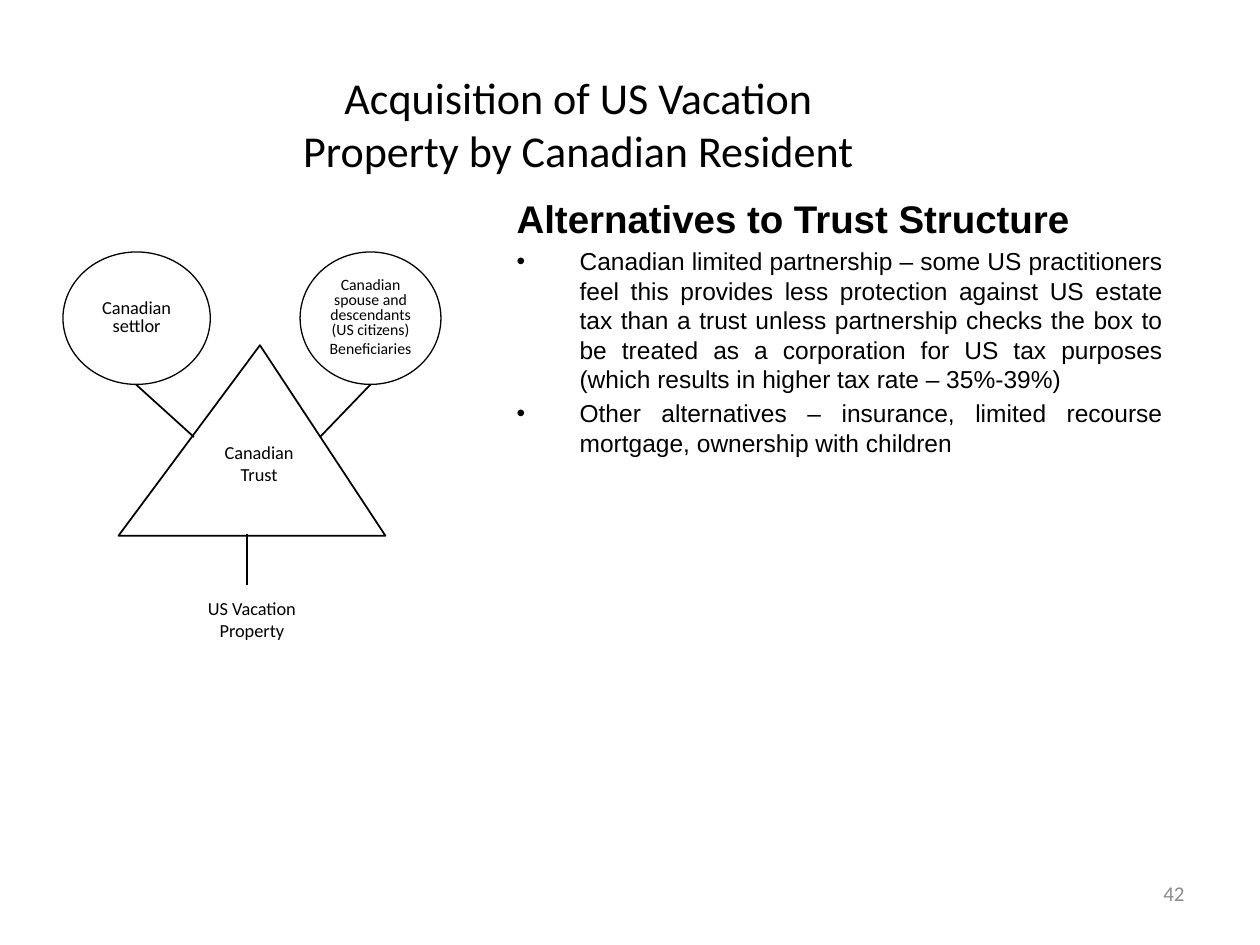
from dataclasses import dataclass

import lxml.etree
import pptx
import pptx.dml.color
import pptx.enum.shapes
import pptx.enum.text
import pptx.oxml.ns
import pptx.util

Cm = pptx.util.Cm
Pt = pptx.util.Pt
ALIGN = pptx.enum.text.PP_ALIGN
ANCHOR = pptx.enum.text.MSO_ANCHOR
SHAPE = pptx.enum.shapes.MSO_SHAPE
COLORS = {"ink": "000000", "paper": "FFFFFF", "number": "8C8C8C"}


@dataclass
class Box:
    left: float
    top: float
    width: float
    height: float


@dataclass
class Party:
    box: Box
    text: str
    size: float
    spacings: tuple


@dataclass
class Label:
    box: Box
    text: str
    size: float = 10.5
    color: str = "ink"
    align: ALIGN = ALIGN.CENTER
    anchor: ANCHOR = ANCHOR.TOP


@dataclass
class Link:
    x1: float
    y1: float
    x2: float
    y2: float


PARTIES = [
    Party(Box(1.27, 5.08, 2.97, 2.67), "Canadian settlor", 10.5, (0.8,)),
    Party(Box(6.05, 5.08, 2.84, 2.67),
          "Canadian spouse and descendants (US citizens)\nBeneficiaries", 9, (0.8, 1)),
]
TRUST = Box(2.39, 6.96, 5.38, 3.84)
LABELS = [
    Label(Box(3.94, 8.76, 2.57, 1.19), "Canadian\nTrust"),
    Label(Box(3.66, 11.91, 2.84, 1.14), "US Vacation Property"),
    Label(Box(18.21, 17.35, 5.92, 1.32), "42", 12, "number", ALIGN.RIGHT, ANCHOR.MIDDLE),
]
LINKS = [
    Link(4.98, 10.77, 4.98, 11.79),
    Link(2.74, 7.75, 3.91, 8.81),
    Link(6.45, 8.81, 7.47, 7.75),
]
HEADING = "Alternatives to Trust Structure"
BULLETS = [
    "Canadian limited partnership – some US practitioners feel this provides less "
    "protection against US estate tax than a trust unless partnership checks the box "
    "to be treated as a corporation for US tax purposes (which results in higher tax "
    "rate – 35%-39%)",
    "Other alternatives – insurance, limited recourse mortgage, ownership with children",
]


def rgb(name: str) -> pptx.dml.color.RGBColor:
    return pptx.dml.color.RGBColor.from_string(COLORS[name])


def bounds(box: Box) -> tuple:
    return Cm(box.left), Cm(box.top), Cm(box.width), Cm(box.height)


def place(sp, box: Box) -> None:
    sp.left, sp.top, sp.width, sp.height = bounds(box)


def style(p, size: float, color: str = "ink", font: str = "Calibri",
          bold: bool = False) -> None:
    for r in p.runs:
        r.font.name = font
        r.font.size = Pt(size)
        r.font.bold = bold
        r.font.color.rgb = rgb(color)


def add_outline(s, kind: SHAPE, box: Box, width: float):
    sp = s.shapes.add_shape(kind, *bounds(box))
    sp.shadow.inherit = False
    sp.line.color.rgb = rgb("ink")
    sp.line.width = Pt(width)
    return sp


def add_party(s, party: Party) -> None:
    sp = add_outline(s, SHAPE.OVAL, party.box, 0.75)
    sp.fill.solid()
    sp.fill.fore_color.rgb = rgb("paper")
    tf = sp.text_frame
    tf.margin_left = tf.margin_right = 0
    tf.word_wrap = True
    tf.vertical_anchor = ANCHOR.MIDDLE
    tf.text = party.text
    for p, spacing in zip(tf.paragraphs, party.spacings):
        p.alignment = ALIGN.CENTER
        p.line_spacing = spacing
        style(p, party.size)


def add_label(s, label: Label) -> None:
    tf = s.shapes.add_textbox(*bounds(label.box)).text_frame
    tf.word_wrap = True
    tf.vertical_anchor = label.anchor
    tf.text = label.text
    for p in tf.paragraphs:
        p.alignment = label.align
        style(p, label.size, label.color)


def add_link(s, link: Link) -> None:
    line = s.shapes.add_connector(
        pptx.enum.shapes.MSO_CONNECTOR.STRAIGHT,
        Cm(link.x1), Cm(link.y1), Cm(link.x2), Cm(link.y2))
    line.line.color.rgb = rgb("ink")
    line.line.width = Pt(1)
    lxml.etree.SubElement(line._element.spPr, pptx.oxml.ns.qn("a:effectLst"))


def fill_title(sp) -> None:
    place(sp, Box(1.27, 2.03, 20.78, 0.91))
    tf = sp.text_frame
    tf.text = "Acquisition of US Vacation\vProperty by Canadian Resident"
    tf.auto_size = pptx.enum.text.MSO_AUTO_SIZE.NONE
    tf.vertical_anchor = ANCHOR.MIDDLE
    tf.paragraphs[0].alignment = ALIGN.CENTER
    style(tf.paragraphs[0], 25.2)


def fill_body(sp) -> None:
    place(sp, Box(10.16, 3.81, 13.54, 11.23))
    tf = sp.text_frame
    tf.text = "\n".join([HEADING, *BULLETS])
    tf.auto_size = pptx.enum.text.MSO_AUTO_SIZE.NONE
    for i, p in enumerate(tf.paragraphs):
        is_heading = i == 0
        pPr = p._p.get_or_add_pPr()
        pPr.set("marL", str(Cm(1.27)))
        pPr.set("indent", str(-Cm(1.27)))
        tag = "a:buNone" if is_heading else "a:buChar"
        bullet = lxml.etree.SubElement(pPr, pptx.oxml.ns.qn(tag))
        if not is_heading:
            bullet.set("char", "•")
        p.alignment = ALIGN.LEFT if is_heading else ALIGN.JUSTIFY
        p.space_before = Pt(0 if is_heading else 2.8)
        style(p, 22 if is_heading else 14, font="Arial", bold=is_heading)


def main() -> None:
    prs = pptx.Presentation()
    prs.slide_width, prs.slide_height = Cm(25.4), Cm(19.05)
    s = prs.slides.add_slide(prs.slide_layouts[1])
    fill_title(s.shapes.title)
    fill_body(s.placeholders[1])
    for party in PARTIES:
        add_party(s, party)
    trust = add_outline(s, SHAPE.ISOSCELES_TRIANGLE, TRUST, 1)
    trust.adjustments[0] = 0.53
    trust.fill.background()
    for label in LABELS:
        add_label(s, label)
    for link in LINKS:
        add_link(s, link)
    prs.save("out.pptx")


if __name__ == "__main__":
    main()
